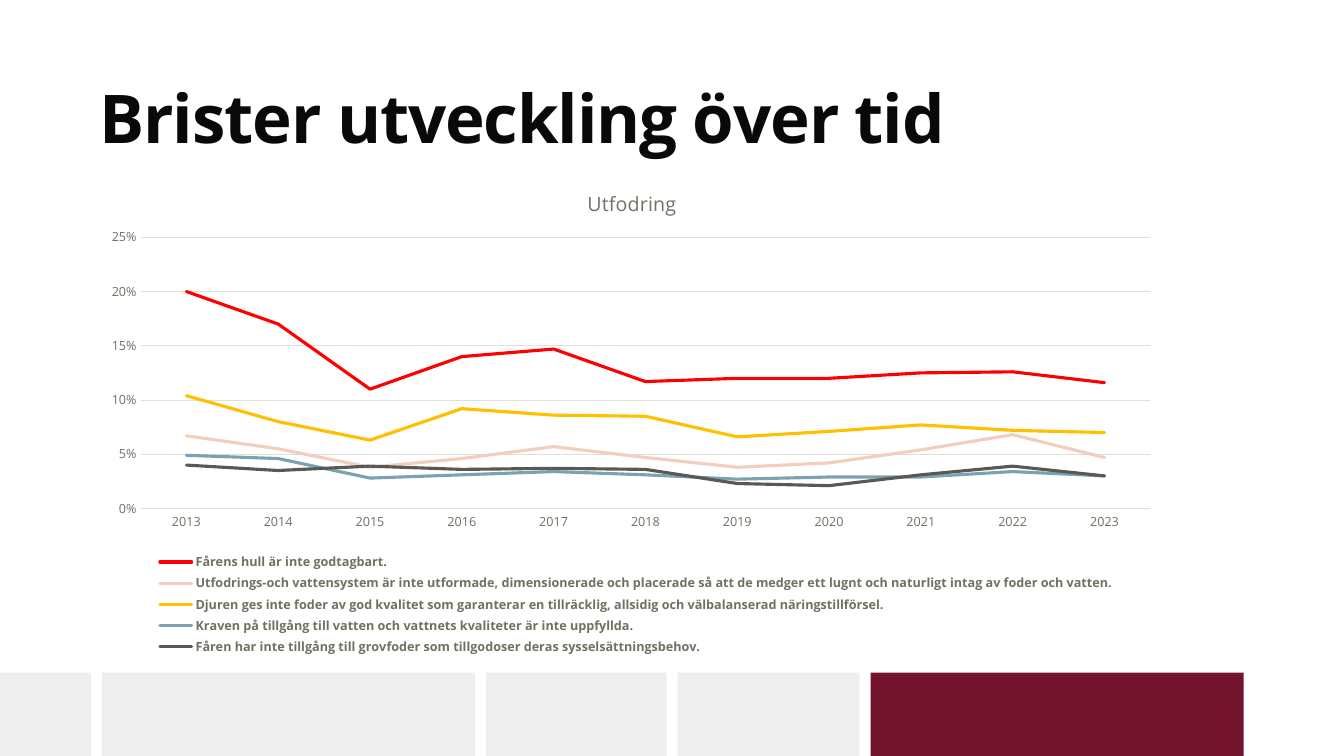
"""Build the slide on shortcomings in sheep feeding over time."""
from dataclasses import dataclass

from lxml.etree import SubElement as Sub
from pptx import Presentation
from pptx.chart.data import CategoryChartData as Data
from pptx.dml.color import RGBColor as RGB
from pptx.enum.chart import XL_CHART_TYPE as Kind
from pptx.enum.chart import XL_LEGEND_POSITION as Place
from pptx.enum.chart import XL_TICK_MARK as Tick
from pptx.enum.shapes import MSO_SHAPE as Shape
from pptx.enum.text import MSO_ANCHOR as Anchor
from pptx.oxml.ns import qn
from pptx.util import Cm, Pt

TITLE = "Brister utveckling över tid"
TOPIC = "Utfodring"
YEARS = [str(year) for year in range(2013, 2024)]
SERIES = [
    ("Fårens hull är inte godtagbart.", "FF0000",
     (.2, .17, .11, .14, .147, .117, .12, .12, .125, .126, .116)),
    ("Utfodrings-och vattensystem är inte utformade, dimensionerade och placerade "
     "så att de medger ett lugnt och naturligt intag av foder och vatten.", "F3CDBD",
     (.067, .055, .038, .046, .057, .047, .038, .042, .054, .068, .047)),
    ("Djuren ges inte foder av god kvalitet som garanterar en tillräcklig, "
     "allsidig och välbalanserad näringstillförsel.", "FFC000",
     (.104, .08, .063, .092, .086, .085, .066, .071, .077, .072, .07)),
    ("Kraven på tillgång till vatten och vattnets kvaliteter är inte uppfyllda.", "7BA2B2",
     (.049, .046, .028, .031, .034, .031, .027, .029, .029, .034, .03)),
    ("Fåren har inte tillgång till grovfoder som tillgodoser deras "
     "sysselsättningsbehov.", "595954",
     (.04, .035, .039, .036, .037, .036, .023, .021, .031, .039, .03)),
]
TILES = [(2.29, "tile"), (9.4, "tile"), (4.55, "tile"), (4.58, "tile"), (9.4, "accent")]
GAP, TILE_TOP, TILE_TALL = .28, 16.95, 2.1


@dataclass(frozen=True)
class Theme:
    """Colours, font and type sizes."""
    font: str = "Open Sans"
    ink: str = "090908"
    muted: str = "707063"
    grid: str = "DFDFDA"
    tile: str = "EEEEEE"
    accent: str = "73152E"
    head: int = 48
    topic: int = 14
    small: int = 9


theme = Theme()


def style(font, size, color, bold=False):
    """Set the face, size, colour and weight of a font."""
    font.name, font.size, font.bold = theme.font, Pt(size), bold
    font.color.rgb = RGB.from_string(color)


def stroke(line, color, width):
    """Set the colour and width of a line."""
    line.color.rgb = RGB.from_string(color)
    line.width = Pt(width)


def settle(node, index, inner=False, **spots):
    """Give a chart part a fixed place in fractions of the chart."""
    for old in node.findall(qn("c:layout")):
        node.remove(old)
    layout = Sub(node, qn("c:layout"))
    node.insert(index, layout)
    manual = Sub(layout, qn("c:manualLayout"))
    if inner:
        Sub(manual, qn("c:layoutTarget")).set("val", "inner")
    for key in ("x", "y"):
        Sub(manual, qn(f"c:{key}Mode")).set("val", "edge")
    for key, spot in spots.items():
        Sub(manual, qn(f"c:{key}")).set("val", str(spot))


def add_tiles(slide):
    """Draw the row of tiles along the bottom edge."""
    left = 0
    for width, tone in TILES:
        tile = slide.shapes.add_shape(
            Shape.RECTANGLE, Cm(left), Cm(TILE_TOP), Cm(width), Cm(TILE_TALL))
        tile.shadow.inherit = False
        tile.fill.solid()
        tile.fill.fore_color.rgb = RGB.from_string(getattr(theme, tone))
        tile.line.fill.background()
        left += width + GAP


def add_title(slide):
    """Write the slide title."""
    frame = slide.shapes.add_textbox(Cm(2.26), Cm(2.16), Cm(29.03), Cm(1.98)).text_frame
    frame.word_wrap = True
    frame.vertical_anchor = Anchor.TOP
    frame.margin_top = frame.margin_bottom = 0
    para = frame.paragraphs[0]
    para.line_spacing = .9
    run = para.add_run()
    run.text = TITLE
    style(run.font, theme.head, theme.ink, True)
    run.font._element.set("spc", "-80")


def add_graph(slide):
    """Draw the line chart with its title and legend."""
    data = Data(number_format="0.0%")
    data.categories = YEARS
    for name, _, points in SERIES:
        data.add_series(name, points)
    chart = slide.shapes.add_chart(
        Kind.LINE, Cm(2.26), Cm(4.14), Cm(27.25), Cm(12.52), data).chart
    style(chart.font, theme.small, theme.muted)

    chart.has_title = True
    run = chart.chart_title.text_frame.paragraphs[0].add_run()
    run.text = TOPIC
    style(run.font, theme.topic, theme.muted)
    settle(chart.chart_title._element, 1, x=.457, y=.04)

    chart.has_legend = True
    legend = chart.legend
    legend.position = Place.BOTTOM
    legend.include_in_layout = False
    style(legend.font, theme.small, theme.muted, True)
    settle(legend._element, 1, x=.055, y=.776, w=.9, h=.22)

    for axis in (chart.category_axis, chart.value_axis):
        axis.major_tick_mark = axis.minor_tick_mark = Tick.NONE
        style(axis.tick_labels.font, theme.small, theme.muted)
    stroke(chart.category_axis.format.line, theme.grid, .75)
    scale = chart.value_axis
    scale.minimum_scale, scale.maximum_scale, scale.major_unit = 0, .25, .05
    scale.tick_labels.number_format = "0%"
    scale.tick_labels.number_format_is_linked = False
    scale.format.line.fill.background()
    stroke(scale.major_gridlines.format.line, theme.grid, .75)

    plot = chart.plots[0]
    plot.vary_by_categories = False
    settle(plot._element.getparent(), 0, True, x=.047, y=.147, w=.934, h=.546)
    for series, (_, color, _) in zip(plot.series, SERIES):
        series.smooth = False
        stroke(series.format.line, color, 2.25)
        series.format.line._ln.set("cap", "rnd")


def main():
    """Build and save the deck."""
    deck = Presentation()
    deck.slide_width, deck.slide_height = Cm(33.87), Cm(19.05)
    slide = deck.slides.add_slide(deck.slide_layouts[6])
    add_tiles(slide)
    add_title(slide)
    add_graph(slide)
    deck.save("out.pptx")


if __name__ == "__main__":
    main()
